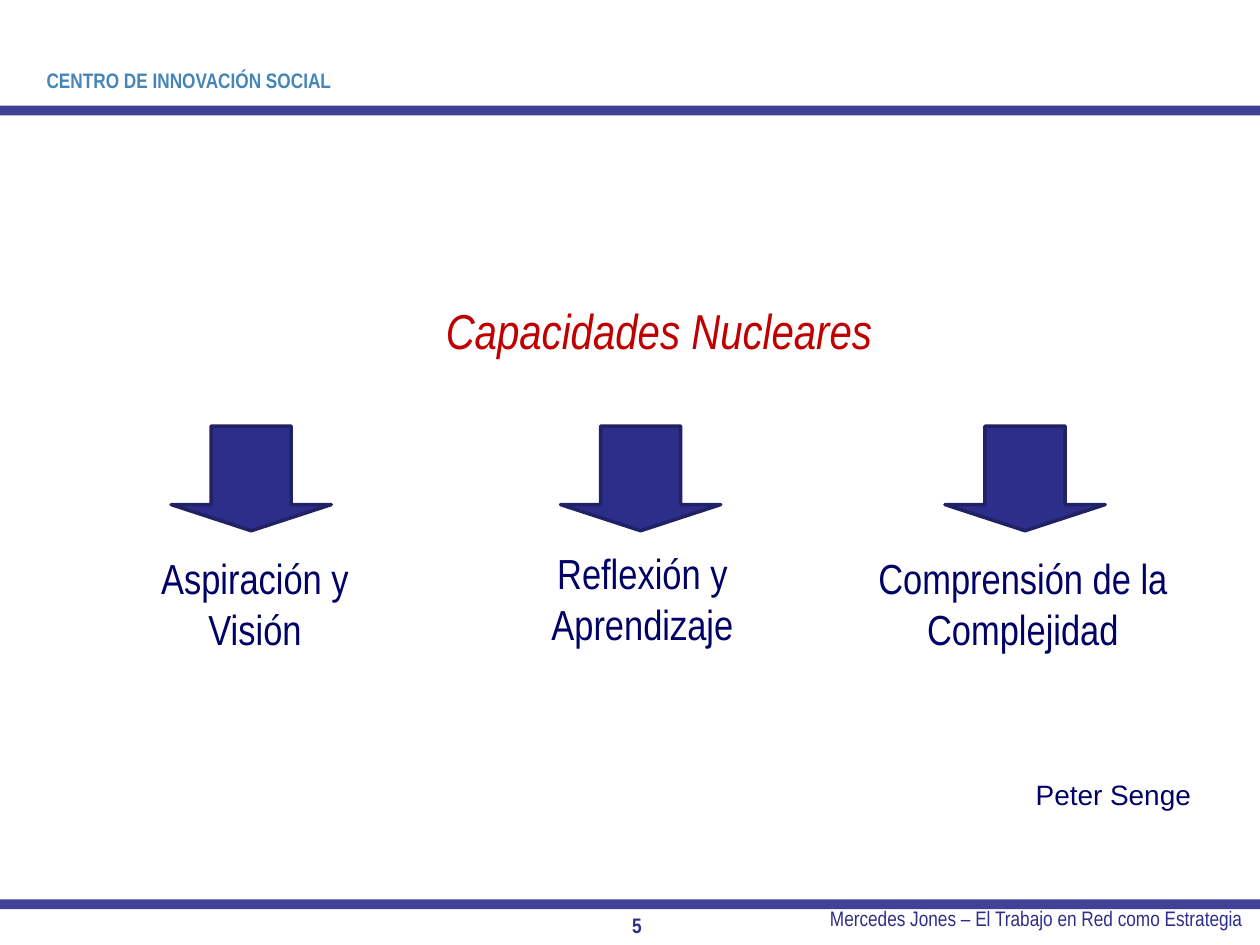
"""Build the slide on the three core capacities."""
import pptx
import pptx.util
import pptx.dml.color
import pptx.enum.shapes
import pptx.enum.text

Cm = pptx.util.Cm
Pt = pptx.util.Pt
Align = pptx.enum.text.PP_ALIGN
Anchor = pptx.enum.text.MSO_ANCHOR
Kind = pptx.enum.shapes.MSO_SHAPE


def color(code):
    return pptx.dml.color.RGBColor.from_string(code)


def write(box, place, lines, size, tint, align, face="Arial Narrow", bold=False, slant=False, anchor=Anchor.TOP):
    box.left, box.top, box.width, box.height = [Cm(n) for n in place]
    frame = box.text_frame
    frame.word_wrap = True
    frame.auto_size = pptx.enum.text.MSO_AUTO_SIZE.NONE
    frame.vertical_anchor = anchor
    frame.text = lines
    for para in frame.paragraphs:
        para.alignment = align
        para.font.name = face
        para.font.size = Pt(size)
        para.font.bold = bold
        para.font.italic = slant
        para.font.color.rgb = color(tint)


deck = pptx.Presentation()
deck.slide_width = Cm(25.4)
deck.slide_height = Cm(19.05)
slide = deck.slides.add_slide(deck.slide_layouts[5])
shapes = slide.shapes

for top in (2.13, 18.13):
    bar = shapes.add_shape(Kind.RECTANGLE, 0, Cm(top), deck.slide_width, Cm(0.2))
    bar.shadow.inherit = False
    bar.fill.solid()
    bar.fill.fore_color.rgb = color("404296")
    bar.line.fill.background()

write(shapes.title, (4.72, 5.94, 17.12, 1.45), "Capacidades Nucleares", 28, "C00000", Align.CENTER, slant=True)

skills = [
    (3.45, 5.14, 11.02, "Aspiración y\nVisión"),
    (11.3, 12.95, 10.92, "Reflexión y\nAprendizaje"),
    (19.05, 20.62, 11.02, "Comprensión de la\nComplejidad"),
]
wide = 6.7
for left, mid, top, label in skills:
    arrow = shapes.add_shape(Kind.DOWN_ARROW, Cm(left), Cm(8.59), Cm(3.23), Cm(2.11))
    arrow.adjustments[0] = 0.5
    arrow.adjustments[1] = 0.25
    arrow.shadow.inherit = False
    arrow.fill.solid()
    arrow.fill.fore_color.rgb = color("2D2D8A")
    arrow.line.color.rgb = color("212166")
    arrow.line.width = Pt(2)
    box = shapes.add_textbox(0, 0, 0, 0)
    write(box, (mid - wide / 2, top, wide, 2.31), label, 24, "000066", Align.CENTER)

head = shapes.add_textbox(0, 0, 0, 0)
write(head, (0.69, 0.91, 6.6, 1.42), "CENTRO DE INNOVACIÓN SOCIAL", 12, "4585B7", Align.LEFT, bold=True, anchor=Anchor.MIDDLE)
source = shapes.add_textbox(0, 0, 0, 0)
write(source, (11.56, 15.55, 12.7, 0.95), "Peter Senge", 16, "000066", Align.RIGHT, face="Arial")
foot = shapes.add_textbox(0, 0, 0, 0)
write(foot, (13.49, 18.13, 11.81, 0.99), "Mercedes Jones – El Trabajo en Red como Estrategia", 12, "2D2D8A", Align.RIGHT)
page = shapes.add_textbox(0, 0, 0, 0)
write(page, (12.29, 18.26, 1.1, 0.79), "5", 12, "2D2D8A", Align.CENTER, bold=True, anchor=Anchor.MIDDLE)

deck.save("out.pptx")
